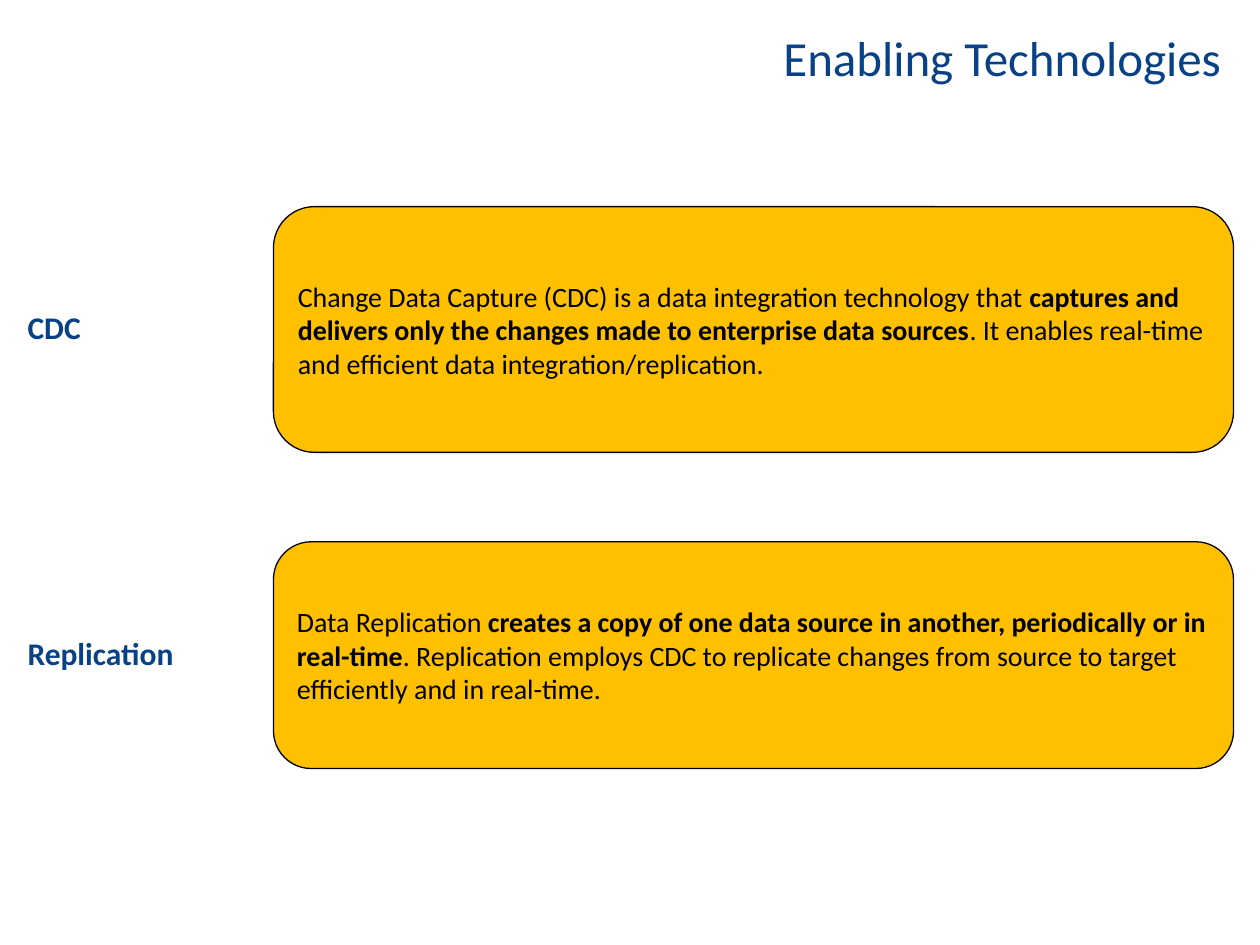
from dataclasses import dataclass

from pptx import Presentation
from pptx.dml.color import RGBColor as RGB
from pptx.enum.shapes import MSO_SHAPE as Shape
from pptx.enum.text import MSO_ANCHOR as Anchor, MSO_AUTO_SIZE as AutoSize, PP_ALIGN as Align
from pptx.util import Inches, Pt


@dataclass(frozen=True)
class Theme:
    font: str = "Calibri"
    navy: RGB = RGB(0x08, 0x41, 0x85)
    amber: RGB = RGB(0xFF, 0xC0, 0x00)
    black: RGB = RGB(0, 0, 0)
    title: int = 28
    label: int = 18
    body: int = 16


T = Theme()

# Content: label, card top and height, text as (words, bold) runs
TITLE = "Enabling Technologies"
ROWS = [
    ("CDC", 1.64, 1.95, [
        ("Change Data Capture (CDC) is a data integration technology that ", False),
        ("captures and delivers only the changes made to enterprise data sources", True),
        (". It enables real-time and efficient data integration/replication.", False)]),
    ("Replication", 4.3, 1.8, [
        ("Data Replication ", False),
        ("creates a copy of one data source in another, periodically or in real-time", True),
        (". Replication employs CDC to replicate changes from source to target "
         "efficiently and in real-time.", False)]),
]

# Columns
RIGHT = 9.79
LABEL_LEFT, LABEL_W, LABEL_H = 0.12, 2.28, 0.4
CARD_LEFT = 2.17
LABEL_RISE = 0.22  # label top above the card's middle


def write(shape, runs, size, color, align=Align.LEFT, anchor=Anchor.TOP):
    tf = shape.text_frame
    tf.word_wrap = True
    tf.auto_size = AutoSize.NONE
    tf.vertical_anchor = anchor
    p = tf.paragraphs[0]
    p.alignment = align
    for text, bold in runs:
        r = p.add_run()
        r.text = text
        r.font.name, r.font.size, r.font.bold = T.font, Pt(size), bold
        r.font.color.rgb = color


def box(left, top, width, height):
    return [Inches(v) for v in (left, top, width, height)]


prs = Presentation()
prs.slide_width, prs.slide_height = Inches(10), Inches(7.5)
s = prs.slides.add_slide(prs.slide_layouts[5])

# Title
title = s.shapes.title
title.left, title.top, title.width, title.height = box(0.53, 0.17, RIGHT - 0.53, 1.25)
write(title, [(TITLE, False)], T.title, T.navy, align=Align.RIGHT)

# One label and one card per technology
for label, top, height, runs in ROWS:
    card = s.shapes.add_shape(Shape.ROUNDED_RECTANGLE,
                              *box(CARD_LEFT, top, RIGHT - CARD_LEFT, height))
    card.shadow.inherit = False
    card.fill.solid()
    card.fill.fore_color.rgb = T.amber
    card.line.color.rgb = T.black
    card.line.width = Pt(0.75)
    write(card, runs, T.body, T.black, anchor=Anchor.MIDDLE)

    tb = s.shapes.add_textbox(*box(LABEL_LEFT, top + height / 2 - LABEL_RISE, LABEL_W, LABEL_H))
    write(tb, [(label, True)], T.label, T.navy)
    tb.text_frame.auto_size = AutoSize.SHAPE_TO_FIT_TEXT

prs.save("out.pptx")
